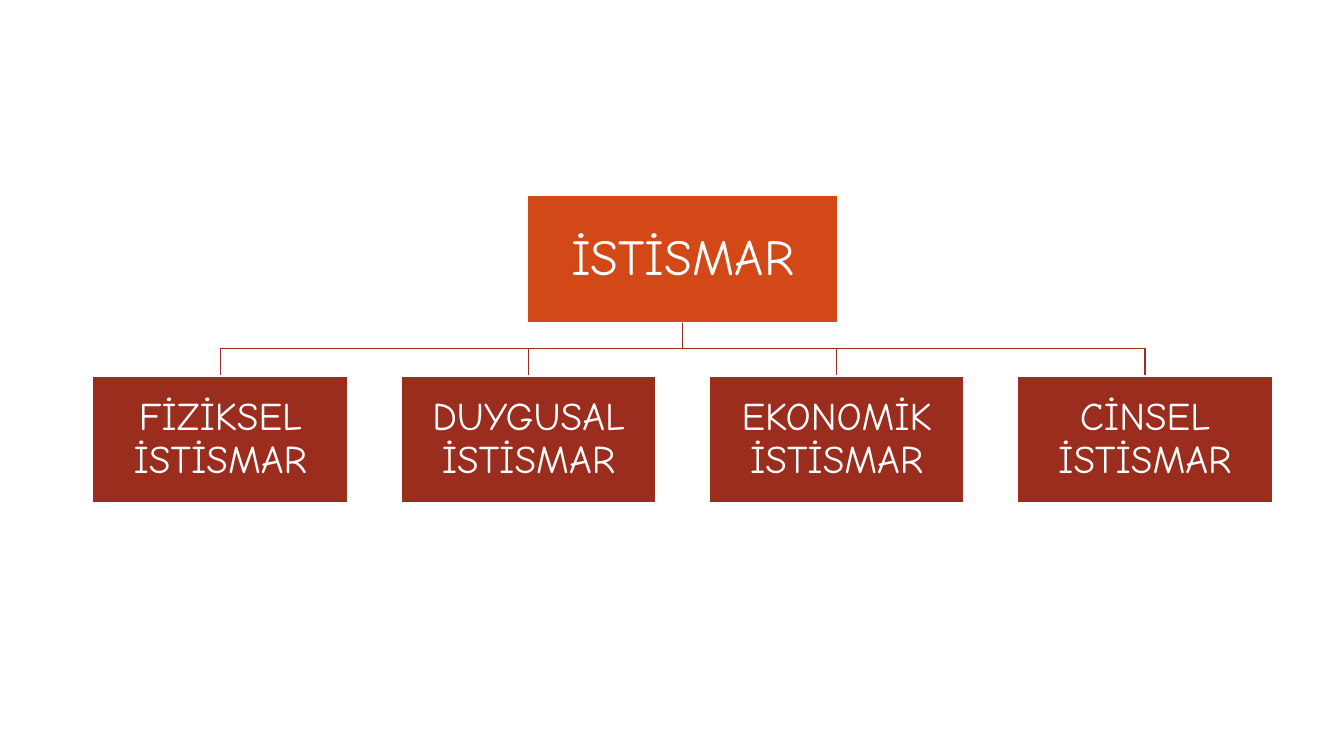
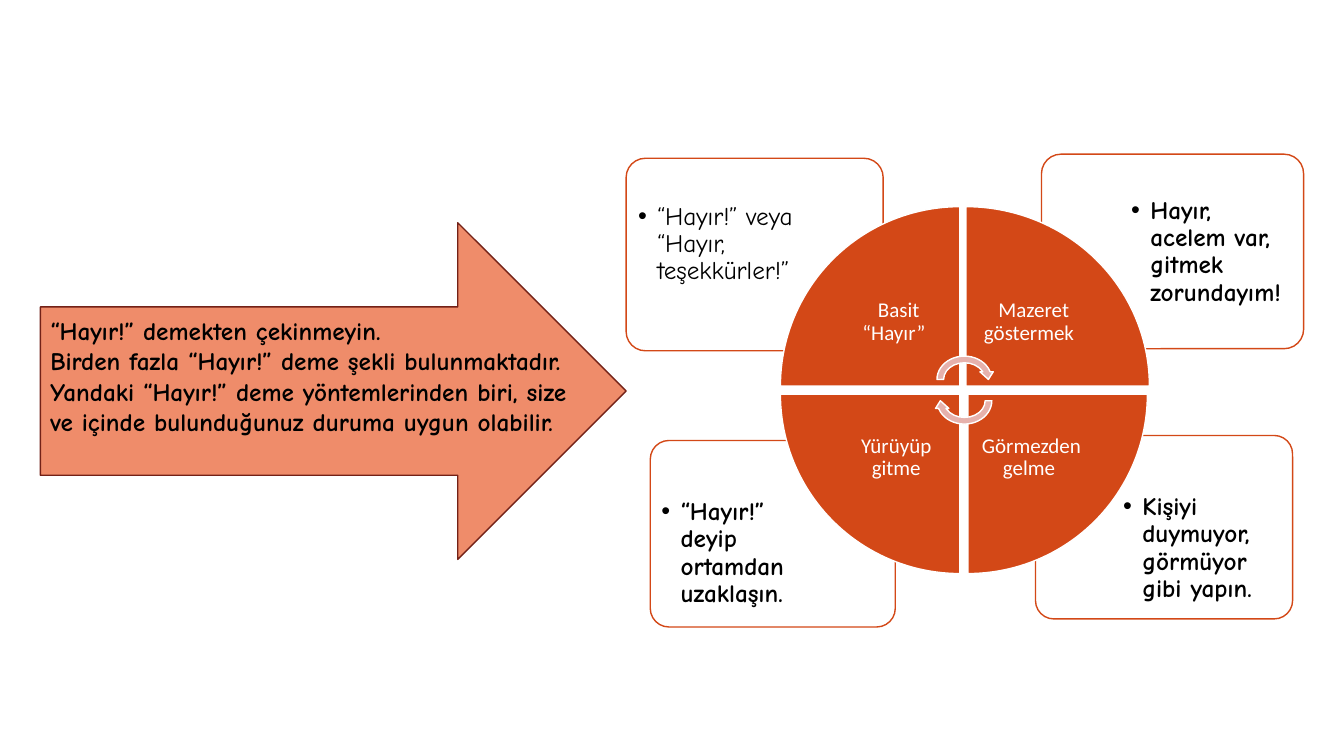
from dataclasses import dataclass

from lxml import etree
from pptx import Presentation
from pptx import util as u
from pptx.dml.color import RGBColor
from pptx.enum import shapes, text
from pptx.oxml import ns

Kind = shapes.MSO_SHAPE
Align = text.PP_ALIGN
Anchor = text.MSO_ANCHOR


# Colours, fonts and type sizes
@dataclass(frozen=True)
class Theme:
    orange: str = "D34817"
    red: str = "9B2D1F"
    peach: str = "EF8C6A"
    rust: str = "732117"
    pink: str = "E6B1AC"
    white: str = "FFFFFF"
    black: str = "000000"
    comic: str = "Comic Neue"
    plain: str = "Calibri"
    head: int = 36
    node: int = 28
    body: int = 18
    small: int = 15


THEME = Theme()


@dataclass(frozen=True)
class Box:
    left: float
    top: float
    width: float
    height: float

    def sizes(self) -> list:
        return [u.Inches(v) for v in (self.left, self.top, self.width, self.height)]


@dataclass(frozen=True)
class Style:
    size: int
    color: str = THEME.white
    font: str = THEME.comic
    bold: bool = False
    align: Align = Align.CENTER
    anchor: Anchor = Anchor.MIDDLE
    inset: tuple = (0.02, 0.02)
    space: float = 0.9
    bullet: bool = False


@dataclass(frozen=True)
class Card:
    frame: Box
    note: Box
    words: str
    bold: bool = True


@dataclass(frozen=True)
class Wedge:
    col: int
    row: int
    turn: int
    words: str
    tall: float = 1.78


# Drawing tools
def set_line(shape, color: str) -> None:
    shape.line.color.rgb = RGBColor.from_string(color)
    shape.line.width = u.Pt(1)


def add_shape(slide, kind: Kind, box: Box, fill: str, line: str, turn: int = 0):
    shape = slide.shapes.add_shape(kind, *box.sizes())
    shape.shadow.inherit = False
    shape.rotation = turn
    shape.fill.solid()
    shape.fill.fore_color.rgb = RGBColor.from_string(fill)
    set_line(shape, line)
    return shape


def add_path(slide, points: list[tuple[float, float]]) -> None:
    first, *rest = [(u.Inches(x), u.Inches(y)) for x, y in points]
    pen = slide.shapes.build_freeform(*first)
    pen.add_line_segments(rest, close=False)
    shape = pen.convert_to_shape()
    shape.shadow.inherit = False
    shape.fill.background()
    set_line(shape, THEME.red)


def add_dot(para) -> None:
    props = para._p.get_or_add_pPr()
    props.set("marL", str(u.Inches(0.19)))
    props.set("indent", str(-u.Inches(0.19)))
    etree.SubElement(props, ns.qn("a:buFont"), typeface="Arial")
    etree.SubElement(props, ns.qn("a:buChar"), char="•")


def write(shape, paras: list[str], style: Style) -> None:
    frame = shape.text_frame
    frame.word_wrap = True
    frame.vertical_anchor = style.anchor
    side, edge = (u.Inches(v) for v in style.inset)
    frame.margin_left = frame.margin_right = side
    frame.margin_top = frame.margin_bottom = edge
    for i, words in enumerate(paras):
        para = frame.add_paragraph() if i else frame.paragraphs[0]
        para.alignment = style.align
        para.line_spacing = style.space
        if style.bullet:
            add_dot(para)
        run = para.add_run()
        run.text = words
        run.font.name = style.font
        run.font.size = u.Pt(style.size)
        run.font.bold = style.bold
        run.font.color.rgb = RGBColor.from_string(style.color)


def add_text(slide, box: Box, paras: list[str], style: Style) -> None:
    write(slide.shapes.add_textbox(*box.sizes()), paras, style)


# Slide 1: tree of abuse types
TYPES = ["FİZİKSEL", "DUYGUSAL", "EKONOMİK", "CİNSEL"]


def draw_tree(slide) -> None:
    first, last, high = 0.92, 10.09, 1.26
    root_top, bar, leaf_top = 1.94, 3.46, 3.73
    root_wide, leaf_wide = 3.08, 2.53
    mid = (first + last + leaf_wide) / 2
    step = (last - first) / (len(TYPES) - 1)
    lefts = [first + i * step for i in range(len(TYPES))]

    # Branches
    for left in reversed(lefts):
        x = left + leaf_wide / 2
        add_path(slide, [(mid, root_top + high), (mid, bar), (x, bar), (x, leaf_top)])

    # Root and leaves
    box = Box(mid - root_wide / 2, root_top, root_wide, high)
    root = add_shape(slide, Kind.RECTANGLE, box, THEME.orange, THEME.white)
    write(root, ["İSTİSMAR"], Style(THEME.head))
    for left, name in zip(lefts, TYPES):
        box = Box(left, leaf_top, leaf_wide, high)
        leaf = add_shape(slide, Kind.RECTANGLE, box, THEME.red, THEME.white)
        write(leaf, [f"{name} İSTİSMAR"], Style(THEME.node))


# Slide 2: ways to say no
CARDS = [
    Card(Box(10.27, 4.32, 2.55, 1.82), Box(11.07, 4.83, 1.7, 1.29),
         "Kişiyi duymuyor, görmüyor gibi yapın."),
    Card(Box(6.45, 4.37, 2.43, 1.85), Box(6.49, 4.88, 1.62, 1.31),
         "“Hayır!” deyip ortamdan uzaklaşın."),
    Card(Box(10.33, 1.53, 2.6, 1.93), Box(11.15, 1.89, 1.74, 1.29),
         "Hayır, acelem var, gitmek zorundayım!"),
    Card(Box(6.21, 1.57, 2.55, 1.91), Box(6.26, 1.95, 1.7, 1.29),
         "“Hayır!” veya “Hayır, teşekkürler!”", False),
]
WEDGES = [
    Wedge(0, 0, 0, " Basit “Hayır” "),
    Wedge(1, 0, 90, " Mazeret göstermek ", 1.82),
    Wedge(1, 1, 180, "Görmezden gelme "),
    Wedge(0, 1, 270, "Yürüyüp gitme"),
]
ADVICE = [
    "“Hayır!” demekten çekinmeyin.",
    "Birden fazla “Hayır!” deme şekli bulunmaktadır. Yandaki “Hayır!” deme "
    "yöntemlerinden biri, size ve içinde bulunduğunuz duruma uygun olabilir.",
]


def draw_cards(slide) -> None:
    for card in CARDS:
        shape = add_shape(slide, Kind.ROUNDED_RECTANGLE, card.frame,
                          THEME.white, THEME.orange)
        shape.adjustments[0] = 0.1
        add_text(slide, card.note, [card.words], Style(
            THEME.body, THEME.black, bold=card.bold, align=Align.LEFT,
            anchor=Anchor.TOP, inset=(0.07, 0.07), bullet=True))


def draw_wheel(slide) -> None:
    left, top, step, wide, label = 7.74, 2.05, 1.86, 1.78, 1.26
    style = Style(THEME.small, font=THEME.plain, inset=(0.12, 0.12))
    for part in WEDGES:
        x, y = left + part.col * step, top + part.row * step
        box = Box(x, y - (part.tall - wide) / 2, wide, part.tall)
        add_shape(slide, Kind.PIE_WEDGE, box, THEME.orange, THEME.white, part.turn)
        # Labels sit in the corner nearest the hub
        inner = Box(x + (1 - part.col) * (wide - label),
                    y + (1 - part.row) * (wide - label), label, label)
        add_text(slide, inner, [part.words], style)
    for y, turn in ((3.5, 0), (3.71, 180)):
        add_shape(slide, Kind.CIRCULAR_ARROW, Box(9.26, y, 0.61, 0.53),
                  THEME.pink, THEME.white, turn)


def draw_advice(slide) -> None:
    add_shape(slide, Kind.RIGHT_ARROW, Box(0.4, 2.21, 5.81, 3.34),
              THEME.peach, THEME.rust)
    add_text(slide, Box(0.4, 3.08, 5.61, 1.62), ADVICE, Style(
        THEME.body, THEME.black, bold=True, align=Align.LEFT,
        anchor=Anchor.TOP, inset=(0.1, 0.05), space=1.0))


def draw_ways(slide) -> None:
    draw_cards(slide)
    draw_wheel(slide)
    draw_advice(slide)


def main() -> None:
    deck = Presentation()
    deck.slide_width, deck.slide_height = u.Inches(13.33), u.Inches(7.5)
    for draw in (draw_tree, draw_ways):
        draw(deck.slides.add_slide(deck.slide_layouts[6]))
    deck.save("out.pptx")


if __name__ == "__main__":
    main()
